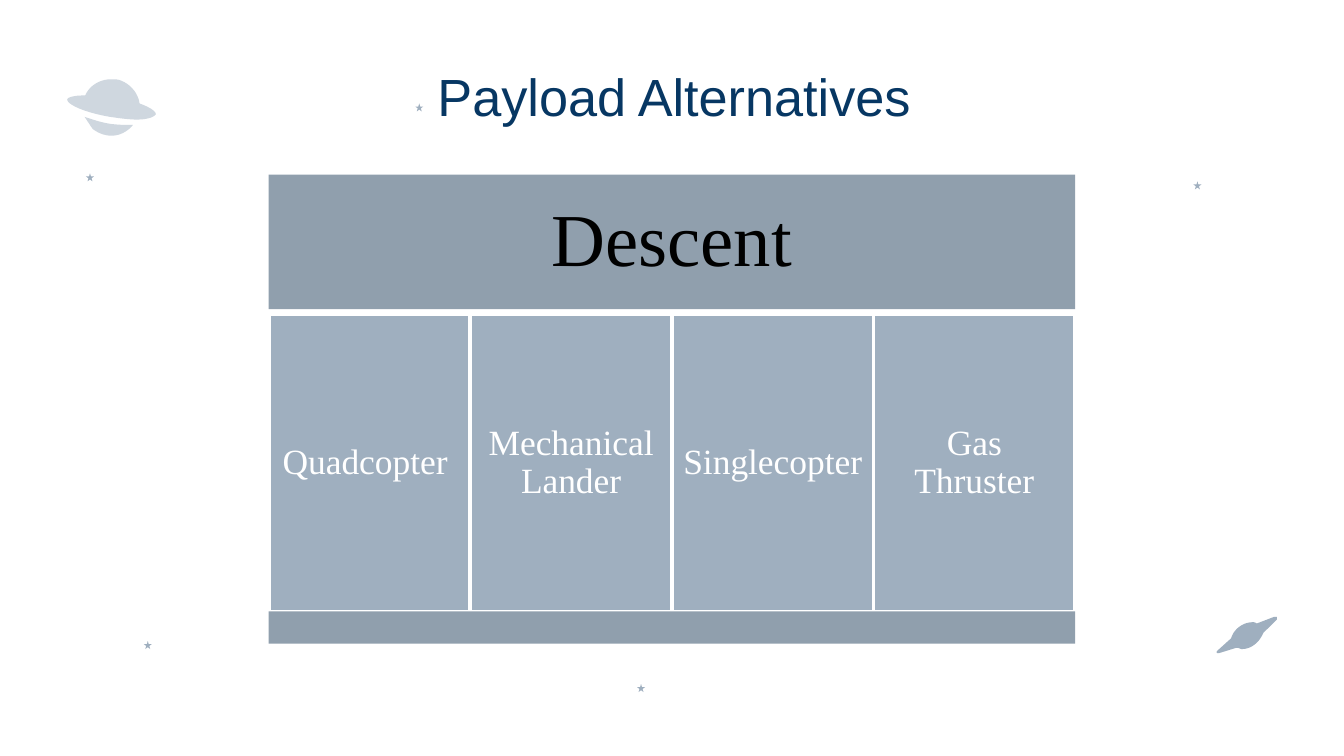
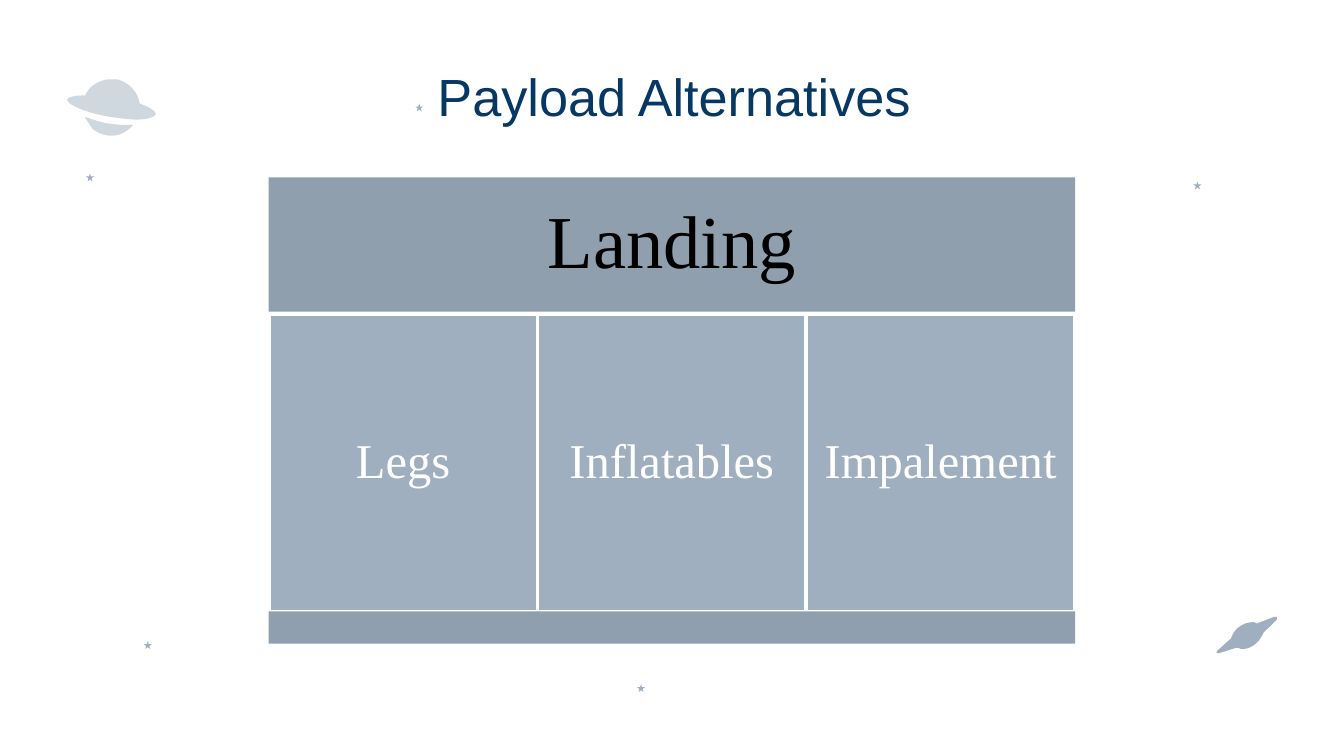
from pptx import Presentation
from pptx.dml.color import RGBColor
from pptx.enum.shapes import MSO_SHAPE
from pptx.enum.text import MSO_ANCHOR, PP_ALIGN
from pptx.util import Inches, Pt

RECTANGLE = MSO_SHAPE.RECTANGLE
STAR = MSO_SHAPE.STAR_5_POINT
MIDDLE = MSO_ANCHOR.MIDDLE
CENTER = PP_ALIGN.CENTER

COLORS = {
    "background": "FFFFFF",
    "title": "073763",
    "planet": "CFD7DF",
    "accent": "9FAFBF",
    "band": "909FAD",
    "heading": "000000",
    "option": "FFFFFF",
}
TITLE_FONT = "Arial"
PANEL_FONT = "Times New Roman"
CURVE_STEPS = 10

PANEL_LEFT, PANEL_WIDTH = 2, 6
HEADING_HEIGHT = 1
OPTIONS_TOP, OPTIONS_HEIGHT = 2.34, 2.21
BASE_HEIGHT = 0.24

STAR_SIZE = 0.06
STARS = [(1.07, 4.77), (4.74, 5.09), (0.64, 1.29), (8.88, 1.35), (3.09, 0.77)]

PLANET_BOTTOM = [
    (0.63, 0.87),
    (0.65, 0.9, 0.67, 0.93, 0.69, 0.96),
    (0.73, 0.99, 0.78, 1.01, 0.83, 1.01),
    (0.89, 1.01, 0.95, 0.98, 0.99, 0.93),
    (0.93, 0.93, 0.87, 0.93, 0.81, 0.92),
    (0.75, 0.91, 0.69, 0.89, 0.63, 0.87),
]
PLANET_TOP = [
    (0.83, 0.59),
    (0.74, 0.59, 0.66, 0.64, 0.63, 0.72),
    (0.65, 0.72, 0.66, 0.72, 0.67, 0.72),
    (0.73, 0.72, 0.78, 0.73, 0.84, 0.74),
    (0.91, 0.75, 0.98, 0.77, 1.04, 0.79),
    (1.04, 0.71, 0.98, 0.63, 0.9, 0.6),
    (0.88, 0.59, 0.85, 0.59, 0.83, 0.59),
]
PLANET_RING = [
    (0.64, 0.71),
    (0.56, 0.71, 0.51, 0.72, 0.5, 0.74),
    (0.5, 0.78, 0.64, 0.84, 0.82, 0.87),
    (0.89, 0.88, 0.96, 0.89, 1.02, 0.89),
    (1.1, 0.89, 1.15, 0.87, 1.16, 0.85),
    (1.16, 0.81, 1.02, 0.75, 0.84, 0.72),
    (0.77, 0.71, 0.7, 0.71, 0.64, 0.71),
]
SMALL_PLANET = [
    (9.49, 4.59),
    (9.48, 4.59),
    (9.35, 4.64),
    (9.34, 4.63, 9.33, 4.63, 9.32, 4.63),
    (9.25, 4.63, 9.18, 4.68, 9.16, 4.75),
    (9.06, 4.84),
    (9.05, 4.85, 9.05, 4.86, 9.06, 4.86),
    (9.07, 4.86),
    (9.2, 4.82),
    (9.22, 4.82, 9.23, 4.83, 9.24, 4.83),
    (9.31, 4.83, 9.37, 4.78, 9.4, 4.71),
    (9.5, 4.61),
    (9.5, 4.61, 9.5, 4.6, 9.5, 4.59),
    (9.49, 4.59),
]


def rgb(name):
    return RGBColor.from_string(COLORS[name])


def paint(shape, fill, outline=None):
    shape.shadow.inherit = False
    shape.fill.solid()
    shape.fill.fore_color.rgb = rgb(fill)
    if outline:
        shape.line.color.rgb = rgb(outline)
        shape.line.width = Pt(2)
    else:
        shape.line.fill.background()


def write(shape, text, *, size, color, font=PANEL_FONT, inset=0.1, spacing=None):
    frame = shape.text_frame
    frame.word_wrap = True
    frame.vertical_anchor = MIDDLE
    frame.margin_left = frame.margin_right = Inches(inset)
    frame.margin_top = frame.margin_bottom = Inches(inset)
    paragraph = frame.paragraphs[0]
    paragraph.alignment = CENTER
    paragraph.line_spacing = spacing
    run = paragraph.add_run()
    run.text = text
    run.font.name = font
    run.font.size = Pt(size)
    run.font.color.rgb = rgb(color)


def add_block(slide, left, top, width, height, fill, outline=None, kind=RECTANGLE):
    block = slide.shapes.add_shape(
        kind, Inches(left), Inches(top), Inches(width), Inches(height)
    )
    paint(block, fill, outline)
    return block


def curve_points(start, segment):
    controls = [start, segment[:2], segment[2:4], segment[4:]]
    for step in range(1, CURVE_STEPS + 1):
        t = step / CURVE_STEPS
        weights = [(1 - t) ** 3, 3 * t * (1 - t) ** 2, 3 * t**2 * (1 - t), t**3]
        yield tuple(
            sum(weight * point[axis] for weight, point in zip(weights, controls))
            for axis in (0, 1)
        )


def add_outline(slide, segments, fill):
    points = [segments[0]]
    for segment in segments[1:]:
        if len(segment) == 2:
            points.append(segment)
        else:
            points.extend(curve_points(points[-1], segment))
    corners = [(Inches(x), Inches(y)) for x, y in points]
    builder = slide.shapes.build_freeform(*corners[0])
    builder.add_line_segments(corners[1:], close=True)
    paint(builder.convert_to_shape(), fill)


def add_sky(slide):
    for part in (PLANET_BOTTOM, PLANET_TOP, PLANET_RING):
        add_outline(slide, part, "planet")
    add_outline(slide, SMALL_PLANET, "accent")
    for left, top in STARS:
        add_block(slide, left, top, STAR_SIZE, STAR_SIZE, "accent", kind=STAR)


def add_title(slide, text):
    title = slide.shapes.add_textbox(
        Inches(0.78), Inches(0.41), Inches(8.47), Inches(0.61)
    )
    write(title, text, size=28, color="title", font=TITLE_FONT)


def add_panel(slide, heading, options, heading_top, option_size, option_inset):
    band = add_block(
        slide, PANEL_LEFT, heading_top, PANEL_WIDTH, HEADING_HEIGHT, "band"
    )
    write(band, heading, size=40, color="heading", inset=0.17, spacing=0.9)
    width = PANEL_WIDTH / len(options)
    for column, option in enumerate(options):
        cell = add_block(
            slide, PANEL_LEFT + column * width, OPTIONS_TOP, width, OPTIONS_HEIGHT,
            "accent", outline="background",
        )
        write(cell, option, size=option_size, color="option",
              inset=option_inset, spacing=0.9)
    base_top = OPTIONS_TOP + OPTIONS_HEIGHT
    add_block(slide, PANEL_LEFT, base_top, PANEL_WIDTH, BASE_HEIGHT, "band")


def add_alternatives(deck, heading, options, **panel_format):
    slide = deck.slides.add_slide(deck.slide_layouts[6])
    slide.background.fill.solid()
    slide.background.fill.fore_color.rgb = rgb("background")
    add_sky(slide)
    add_title(slide, "Payload Alternatives")
    add_panel(slide, heading, options, **panel_format)


def main():
    deck = Presentation()
    deck.slide_width = Inches(10)
    deck.slide_height = deck.slide_width * 9 // 16
    add_alternatives(
        deck, "Descent",
        ["Quadcopter ", "Mechanical Lander", "Singlecopter", "Gas Thruster"],
        heading_top=1.3, option_size=19, option_inset=0.08,
    )
    add_alternatives(
        deck, "Landing", ["Legs", "Inflatables", "Impalement"],
        heading_top=1.32, option_size=26, option_inset=0.11,
    )
    deck.save("out.pptx")


if __name__ == "__main__":
    main()
